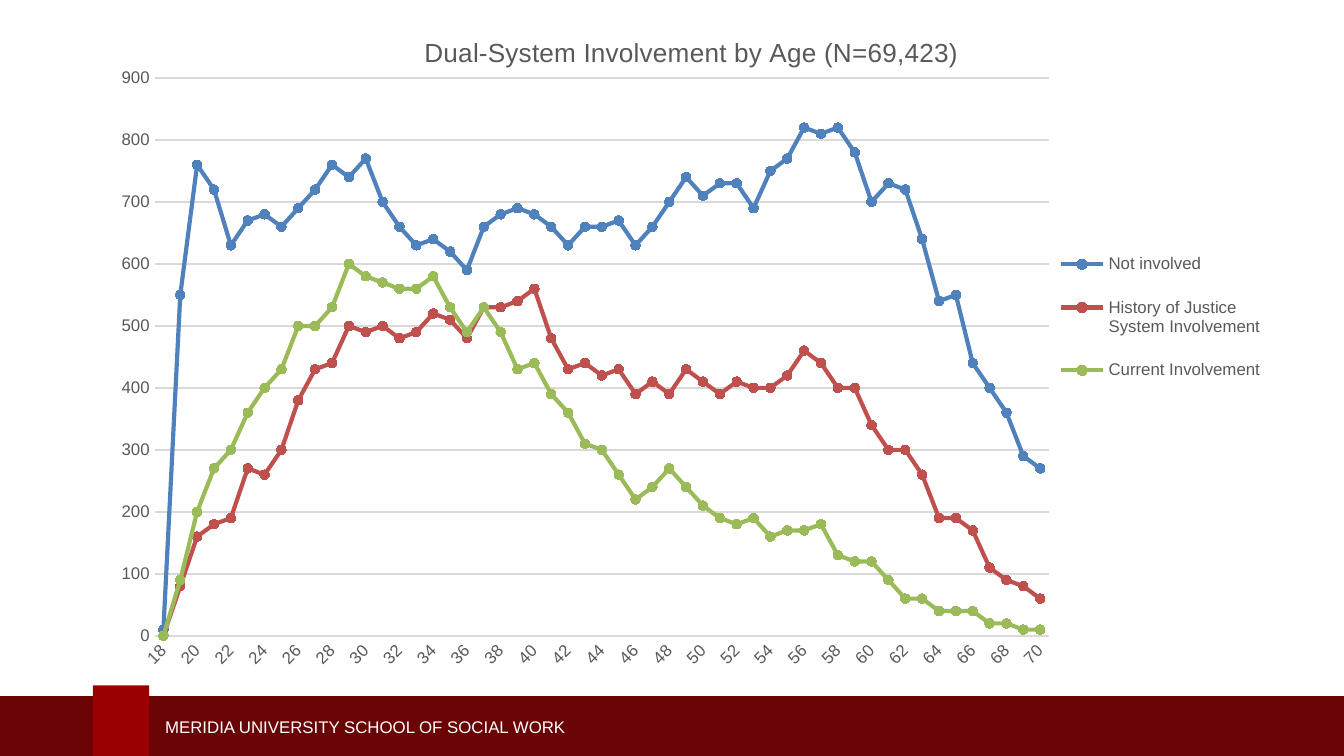
"""Build a slide with a line chart of dual-system involvement by age."""
from lxml import etree
from pptx import Presentation
from pptx.chart.data import CategoryChartData
from pptx.dml.color import RGBColor
from pptx.enum.chart import XL_CHART_TYPE, XL_LEGEND_POSITION, XL_MARKER_STYLE, XL_TICK_MARK
from pptx.enum.shapes import MSO_SHAPE
from pptx.enum.text import MSO_ANCHOR
from pptx.oxml.ns import qn
from pptx.util import Inches, Pt

LINE_MARKERS = XL_CHART_TYPE.LINE_MARKERS
RIGHT = XL_LEGEND_POSITION.RIGHT
CIRCLE = XL_MARKER_STYLE.CIRCLE
NO_TICK = XL_TICK_MARK.NONE
RECTANGLE = MSO_SHAPE.RECTANGLE
MIDDLE = MSO_ANCHOR.MIDDLE

WIDTH = 10
HEIGHT = WIDTH * 9 / 16
FONT = "Arial"
COLORS = {
    "band": "690304", "tab": "990000", "footer": "FFFFFF",
    "label": "595959", "grid": "D9D9D9",
    "blue": "4F81BD", "red": "C0504D", "green": "9BBB59",
}
TITLE = "Dual-System Involvement by Age (N=69,423)"
FOOTER = "MERIDIA UNIVERSITY SCHOOL OF SOCIAL WORK"
AGES = [str(age) for age in range(18, 71)]
GROUPS = [
    ("Not involved", "blue", [
        10, 550, 760, 720, 630, 670, 680, 660, 690, 720, 760, 740, 770, 700, 660, 630, 640, 620,
        590, 660, 680, 690, 680, 660, 630, 660, 660, 670, 630, 660, 700, 740, 710, 730, 730, 690,
        750, 770, 820, 810, 820, 780, 700, 730, 720, 640, 540, 550, 440, 400, 360, 290, 270]),
    ("History of Justice System Involvement", "red", [
        0, 80, 160, 180, 190, 270, 260, 300, 380, 430, 440, 500, 490, 500, 480, 490, 520, 510,
        480, 530, 530, 540, 560, 480, 430, 440, 420, 430, 390, 410, 390, 430, 410, 390, 410, 400,
        400, 420, 460, 440, 400, 400, 340, 300, 300, 260, 190, 190, 170, 110, 90, 80, 60]),
    ("Current Involvement", "green", [
        0, 90, 200, 270, 300, 360, 400, 430, 500, 500, 530, 600, 580, 570, 560, 560, 580, 530,
        490, 530, 490, 430, 440, 390, 360, 310, 300, 260, 220, 240, 270, 240, 210, 190, 180, 190,
        160, 170, 170, 180, 130, 120, 120, 90, 60, 60, 40, 40, 40, 20, 20, 10, 10]),
]
BAND_TOP, TAB_TOP = 5.18, 5.1
FOOTER_BLOCKS = [
    ("band", 0, BAND_TOP, WIDTH, HEIGHT - BAND_TOP),
    ("tab", 0.69, TAB_TOP, 0.42, HEIGHT - TAB_TOP),
]
FOOTER_BOX = (1.13, 5.28, 3.95, 0.25)
CHART_BOX = (0.76, 0.08, 8.75, 4.96)
TITLE_SHARE = {"x": 0.27, "y": 0.03}
PLOT_SHARE = {"x": 0.045, "y": 0.101, "w": 0.76, "h": 0.837}
LEGEND_SHARE = {"x": 0.81, "y": 0.33, "w": 0.18, "h": 0.26}


def rgb(key):
    return RGBColor.from_string(COLORS[key])


def style_font(font, size, color):
    font.name, font.size, font.bold = FONT, Pt(size), False
    font.color.rgb = rgb(color)


def style_line(line, color, width):
    line.color.rgb = rgb(color)
    line.width = Pt(width)


def place(part, after, shares, inner=False):
    for old in part.findall(qn("c:layout")):
        part.remove(old)
    layout = etree.Element(qn("c:layout"))
    manual = etree.SubElement(layout, qn("c:manualLayout"))
    settings = [("layoutTarget", "inner")] if inner else []
    settings += [("xMode", "edge"), ("yMode", "edge"), *shares.items()]
    for tag, value in settings:
        etree.SubElement(manual, qn(f"c:{tag}")).set("val", str(value))
    anchor = part.find(qn(after)) if after else None
    part.insert(0 if anchor is None else part.index(anchor) + 1, layout)


def add_footer(slide):
    for color, *box in FOOTER_BLOCKS:
        block = slide.shapes.add_shape(RECTANGLE, *map(Inches, box))
        block.shadow.inherit = False
        block.fill.solid()
        block.fill.fore_color.rgb = rgb(color)
        block.line.fill.background()
    frame = slide.shapes.add_textbox(*map(Inches, FOOTER_BOX)).text_frame
    frame.word_wrap = True
    frame.vertical_anchor = MIDDLE
    frame.text = FOOTER
    style_font(frame.paragraphs[0].runs[0].font, 9, "footer")


def add_age_chart(slide):
    data = CategoryChartData(number_format="###0")
    data.categories = AGES
    for name, _, counts in GROUPS:
        data.add_series(name, counts)
    chart = slide.shapes.add_chart(LINE_MARKERS, *map(Inches, CHART_BOX), data).chart
    chart.font.name, chart.font.size = FONT, Pt(10)

    chart.has_title = True
    heading = chart.chart_title
    heading.text_frame.text = TITLE
    style_font(heading.text_frame.paragraphs[0].runs[0].font, 14, "label")
    place(heading._element, "c:tx", TITLE_SHARE)

    chart.has_legend = True
    legend = chart.legend
    legend.position = RIGHT
    legend.include_in_layout = False
    style_font(legend.font, 9, "label")
    place(legend._element, "c:legendPos", LEGEND_SHARE)

    ages, counts = chart.category_axis, chart.value_axis
    for axis in (ages, counts):
        axis.major_tick_mark = axis.minor_tick_mark = NO_TICK
        style_font(axis.tick_labels.font, 9, "label")
    style_line(ages.format.line, "grid", 0.75)
    ages._element.find(f"{qn('c:txPr')}/{qn('a:bodyPr')}").set("rot", "-2700000")
    counts.minimum_scale, counts.maximum_scale, counts.major_unit = 0, 900, 100
    counts.tick_labels.number_format = "###0"
    counts.tick_labels.number_format_is_linked = False
    counts.format.line.fill.background()
    style_line(counts.major_gridlines.format.line, "grid", 0.75)

    plot = chart.plots[0]
    plot.vary_by_categories = False
    place(plot._element.getparent(), None, PLOT_SHARE, inner=True)
    for series, (_, color, _) in zip(plot.series, GROUPS):
        series.smooth = False
        style_line(series.format.line, color, 2.25)
        marker = series.marker
        marker.style, marker.size = CIRCLE, 5
        marker.format.fill.solid()
        marker.format.fill.fore_color.rgb = rgb(color)
        style_line(marker.format.line, color, 0.75)


def main():
    deck = Presentation()
    deck.slide_width, deck.slide_height = Inches(WIDTH), Inches(HEIGHT)
    slide = deck.slides.add_slide(deck.slide_layouts[6])
    add_footer(slide)
    add_age_chart(slide)
    deck.save("out.pptx")


if __name__ == "__main__":
    main()
